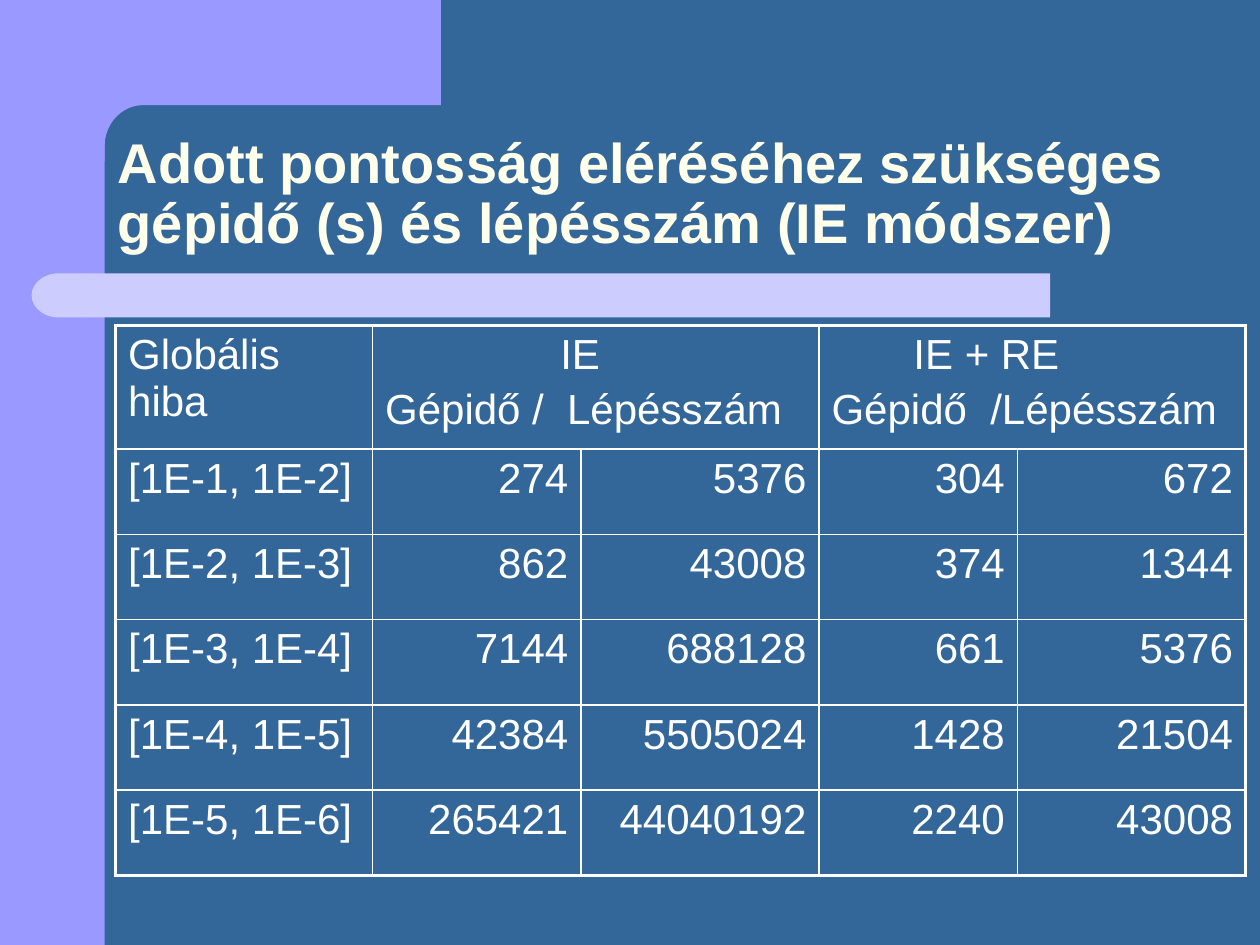
"""Build a slide comparing run time and step count of the IE and IE + RE methods."""
import math

from lxml import etree
from pptx import Presentation
from pptx.dml.color import RGBColor
from pptx.enum.shapes import MSO_SHAPE
from pptx.enum.text import MSO_ANCHOR, MSO_AUTO_SIZE, PP_ALIGN
from pptx.oxml.ns import qn
from pptx.util import Cm, Pt

RECT = MSO_SHAPE.RECTANGLE
ROUNDED = MSO_SHAPE.ROUNDED_RECTANGLE
DELAY = MSO_SHAPE.FLOWCHART_DELAY
LEFT, RIGHT = PP_ALIGN.LEFT, PP_ALIGN.RIGHT

BLUE = RGBColor(0x33, 0x66, 0x99)
VIOLET = RGBColor(0x99, 0x99, 0xFF)
LAVENDER = RGBColor(0xCC, 0xCC, 0xFF)
CREAM = RGBColor(0xFF, 0xFF, 0xEB)
WHITE = RGBColor(0xFF, 0xFF, 0xFF)

FONT = "Arial"
TITLE = "Adott pontosság eléréséhez szükséges gépidő (s) és lépésszám (IE módszer)"
COL_WIDTHS = [5.18, 4.2, 4.8, 4, 4.6]
HEADER_HEIGHT, ROW_HEIGHT = 2.49, 1.72
HEADERS = [
    (0, 0, ["Globális hiba"], 0),
    (1, 2, ["IE", "Gépidő /  Lépésszám"], 3.53),
    (3, 4, ["IE + RE", "Gépidő  /Lépésszám"], 1.65),
]
ROWS = [
    ("[1E-1, 1E-2]", 274, 5376, 304, 672),
    ("[1E-2, 1E-3]", 862, 43008, 374, 1344),
    ("[1E-3, 1E-4]", 7144, 688128, 661, 5376),
    ("[1E-4, 1E-5]", 42384, 5505024, 1428, 21504),
    ("[1E-5, 1E-6]", 265421, 44040192, 2240, 43008),
]


def paint(sp, color):
    """Give a shape a plain fill without line or shadow."""
    sp.shadow.inherit = False
    sp.fill.solid()
    sp.fill.fore_color.rgb = color
    sp.line.fill.background()


def add_block(s, kind, box, color):
    """Add a filled preset shape at a box in centimetres."""
    sp = s.shapes.add_shape(kind, *map(Cm, box))
    paint(sp, color)
    return sp


def add_corner(s):
    """Add the top block whose lower part ends in a concave quarter arc."""
    left, right, edge, top, bottom = 1.27, 8.89, 2.11, 2.12, 3.25
    rx, ry = 0.78, 0.83
    arc = [
        (edge + rx * (1 - math.sin(a)), top + ry * (1 - math.cos(a)))
        for a in (math.radians(d) for d in range(0, 91, 6))
    ]
    points = [(right, 0), (right, top), *arc, (edge, bottom), (left, bottom), (left, 0)]
    points = [(Cm(x), Cm(y)) for x, y in points]
    builder = s.shapes.build_freeform(*points[0])
    builder.add_line_segments(points[1:])
    paint(builder.convert_to_shape(), VIOLET)


def add_decoration(s):
    """Add the side panel, the corner block and the bar under the title."""
    add_block(s, RECT, (0, 0, 2.11, 19.05), VIOLET)
    add_corner(s)
    add_block(s, ROUNDED, (1.7, 5.51, 19.47, 0.89), LAVENDER).adjustments[0] = 0
    cap = add_block(s, DELAY, (0.64, 5.51, 1.09, 0.89), LAVENDER)
    cap._element.spPr.find(qn("a:xfrm")).set("flipH", "1")


def style_paragraph(p, size, color, bold=False):
    """Set the font of a whole paragraph."""
    p.font.name = FONT
    p.font.size = Pt(size)
    p.font.bold = bold
    p.font.color.rgb = color


def set_title(s):
    """Place and format the title, in front of the decoration."""
    sp = s.shapes.title
    sp.left, sp.top, sp.width, sp.height = Cm(2.12), Cm(2.12), Cm(22.01), Cm(3.17)
    tf = sp.text_frame
    tf.text = TITLE
    tf.word_wrap = True
    tf.auto_size = MSO_AUTO_SIZE.NONE
    tf.vertical_anchor = MSO_ANCHOR.BOTTOM
    p = tf.paragraphs[0]
    p.alignment = LEFT
    p.line_spacing = 0.9
    style_paragraph(p, 32, CREAM, bold=True)
    s.shapes._spTree.append(sp._element)


def fill_cell(cell, lines, align=LEFT, indent=0):
    """Write lines into a cell, with the first one indented."""
    tf = cell.text_frame
    tf.text = "\n".join(lines)
    for p in tf.paragraphs:
        p.alignment = align
        p.space_before = Pt(4.8)
        style_paragraph(p, 24, WHITE)
    if indent:
        tf.paragraphs[0]._p.get_or_add_pPr().set("marL", str(Cm(indent)))


def set_borders(cell, outer):
    """Draw white cell borders, thicker on the outer sides."""
    tc_pr = cell._tc.get_or_add_tcPr()
    for side in "LRTB":
        width = Pt(2.25 if side in outer else 1)
        ln = etree.SubElement(tc_pr, qn(f"a:ln{side}"), w=str(width))
        fill = etree.SubElement(ln, qn("a:solidFill"))
        etree.SubElement(fill, qn("a:srgbClr"), val=str(WHITE))


def outer_sides(row, first, last):
    """Return the sides of a cell that lie on the table's edge."""
    edges = {
        "L": first == 0,
        "R": last == len(COL_WIDTHS) - 1,
        "T": row == 0,
        "B": row == len(ROWS),
    }
    return [side for side, on_edge in edges.items() if on_edge]


def add_results(s):
    """Add the table of results."""
    height = HEADER_HEIGHT + ROW_HEIGHT * len(ROWS)
    frame = s.shapes.add_table(
        len(ROWS) + 1, len(COL_WIDTHS), Cm(2.33), Cm(6.56), Cm(sum(COL_WIDTHS)), Cm(height)
    )
    table = frame.table
    table.first_row = table.horz_banding = False
    for col, width in zip(table.columns, COL_WIDTHS):
        col.width = Cm(width)
    for i, row in enumerate(table.rows):
        row.height = Cm(ROW_HEIGHT if i else HEADER_HEIGHT)
    for first, last, lines, indent in HEADERS:
        cell = table.cell(0, first)
        if last > first:
            cell.merge(table.cell(0, last))
        fill_cell(cell, lines, indent=indent)
        set_borders(cell, outer_sides(0, first, last))
    for i, values in enumerate(ROWS, 1):
        for j, value in enumerate(values):
            cell = table.cell(i, j)
            fill_cell(cell, [str(value)], RIGHT if j else LEFT)
            set_borders(cell, outer_sides(i, j, j))
    for cell in table.iter_cells():
        cell.fill.background()


def main():
    """Build and save the presentation."""
    prs = Presentation()
    prs.slide_width, prs.slide_height = Cm(25.4), Cm(19.05)
    s = prs.slides.add_slide(prs.slide_layouts[5])
    s.background.fill.solid()
    s.background.fill.fore_color.rgb = BLUE
    add_decoration(s)
    set_title(s)
    add_results(s)
    prs.save("out.pptx")


if __name__ == "__main__":
    main()
